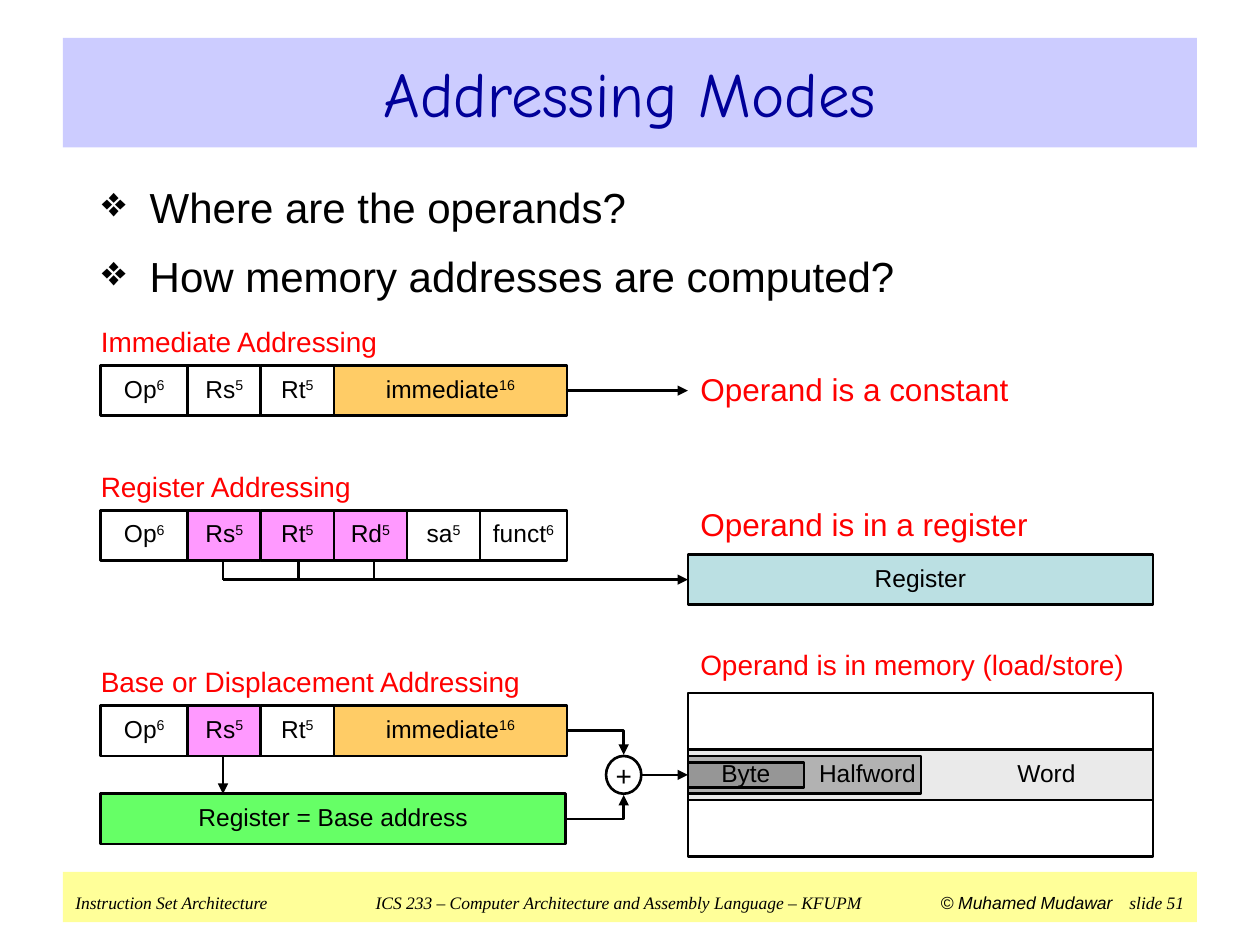
from pptx import Presentation
from pptx.dml.color import RGBColor
from pptx.enum.shapes import MSO_CONNECTOR, MSO_SHAPE
from pptx.enum.text import MSO_ANCHOR, PP_ALIGN
from pptx.oxml.ns import qn
from pptx.util import Inches, Pt
from lxml.etree import SubElement

BLACK = RGBColor(0x00, 0x00, 0x00)
WHITE = RGBColor(0xFF, 0xFF, 0xFF)
RED = RGBColor(0xFF, 0x00, 0x00)
NAVY = RGBColor(0x00, 0x00, 0x99)
LAVENDER = RGBColor(0xCC, 0xCC, 0xFF)
YELLOW = RGBColor(0xFF, 0xFF, 0x99)
PINK = RGBColor(0xFF, 0x99, 0xFF)
ORANGE = RGBColor(0xFF, 0xCC, 0x66)
GREEN = RGBColor(0x66, 0xFF, 0x66)
TEAL = RGBColor(0xBB, 0xE0, 0xE3)
LIGHT_GRAY = RGBColor(0xEA, 0xEA, 0xEA)
MID_GRAY = RGBColor(0xB2, 0xB2, 0xB2)
DARK_GRAY = RGBColor(0x96, 0x96, 0x96)

LEFT, RIGHT = 0.8, 5.46
WIDTH, HEIGHT = 3.69, 0.4
OP_W, REG_W, IMM_W = 0.69, 0.58, 1.85
ADDER_X, ADDER_Y = 4.95, 6.15


class Diagram:
    """Holds the slide and the style shared by its elements."""

    font = "Arial"
    line_width = Pt(1.5)

    def __init__(self, slide):
        self.slide = slide

    def run(self, p, text, size, color=BLACK, superscript=False, **fmt):
        r = p.add_run()
        r.text = text
        for name, value in {"name": self.font, "size": Pt(size), **fmt}.items():
            setattr(r.font, name, value)
        r.font.color.rgb = color
        if superscript:
            r.font._element.set("baseline", "30000")

    def frame(self, sp, anchor=MSO_ANCHOR.MIDDLE, margins=(0, 0, 0, 0)):
        """Prepare the text frame; margins are left, top, right, bottom."""
        tf = sp.text_frame
        sides = ("left", "top", "right", "bottom")
        fmt = {f"margin_{side}": Inches(m) for side, m in zip(sides, margins)}
        fmt.update(word_wrap=True, vertical_anchor=anchor)
        for name, value in fmt.items():
            setattr(tf, name, value)
        return tf

    def shape(self, x, y, w, h, fill=None, outline=True, kind=MSO_SHAPE.RECTANGLE):
        sp = self.slide.shapes.add_shape(kind, Inches(x), Inches(y), Inches(w), Inches(h))
        sp.shadow.inherit = False
        if fill is None:
            sp.fill.background()
        else:
            sp.fill.solid()
            sp.fill.fore_color.rgb = fill
        if outline:
            sp.line.color.rgb = BLACK
            sp.line.width = self.line_width
        else:
            sp.line.fill.background()
        return sp

    def cell(self, x, y, w, text, fill=WHITE, h=HEIGHT, indent=0):
        """Box with centred text; whatever follows ^ is superscript."""
        p = self.frame(self.shape(x, y, w, h, fill)).paragraphs[0]
        p.alignment, p.line_spacing = PP_ALIGN.CENTER, 0.85
        if indent:
            p._p.get_or_add_pPr().set("marL", str(Inches(indent)))
        base, _, bits = text.partition("^")
        self.run(p, base, 14)
        if bits:
            self.run(p, bits, 14, superscript=True)

    def instruction(self, y, title, fields):
        self.label(LEFT, y - 0.35, title)
        x = LEFT
        for text, width, fill in fields:
            self.cell(x, y, width, text, fill)
            x += width

    def label(self, x, y, text, size=16, inset=0):
        sp = self.slide.shapes.add_textbox(Inches(x), Inches(y), Inches(WIDTH), Inches(0.32))
        tf = self.frame(sp, margins=(inset, 0, inset, 0))
        self.run(tf.paragraphs[0], text, size, RED)

    def banner(self, text):
        p = self.frame(self.shape(0.5, 0.3, 9, 0.87, LAVENDER, False)).paragraphs[0]
        p.alignment = PP_ALIGN.CENTER
        self.run(p, text, 36, NAVY, name="Comic Neue")

    def bullets(self, lines):
        sp = self.slide.shapes.add_textbox(Inches(0.71), Inches(1.35), Inches(8.39), Inches(1.15))
        tf = self.frame(sp, MSO_ANCHOR.TOP, (0.1, 0.09, 0.1, 0.05))
        for i, text in enumerate(lines):
            p = tf.add_paragraph() if i else tf.paragraphs[0]
            p.space_after = Pt(10.5)
            pPr = p._p.get_or_add_pPr()
            pPr.set("marL", str(Inches(0.38)))
            pPr.set("indent", str(-Inches(0.38)))
            SubElement(pPr, qn("a:buChar"), char="❖")
            self.run(p, text, 24)

    def footer(self, parts, stops):
        """Parts are (text, font) pairs, stops are (alignment, position) pairs."""
        sp = self.shape(0.5, 6.92, 9, HEIGHT, YELLOW, False)
        p = self.frame(sp, MSO_ANCHOR.BOTTOM, (0.1, 0.05, 0.1, 0.07)).paragraphs[0]
        p.alignment = PP_ALIGN.LEFT
        tabs = SubElement(p._p.get_or_add_pPr(), qn("a:tabLst"))
        for algn, pos in stops:
            SubElement(tabs, qn("a:tab"), pos=str(Inches(pos)), algn=algn)
        for i, (text, font) in enumerate(parts):
            self.run(p, "\t" + text if i else text, 10, name=font, italic=True)

    def connector(self, x1, y1, x2, y2, arrow=True, bent=False):
        kind = MSO_CONNECTOR.ELBOW if bent else MSO_CONNECTOR.STRAIGHT
        cn = self.slide.shapes.add_connector(kind, Inches(x1), Inches(y1), Inches(x2), Inches(y2))
        cn.line.color.rgb = BLACK
        cn.line.width = self.line_width
        spPr = cn._element.spPr
        if bent:
            spPr.find(qn("a:prstGeom")).set("prst", "bentConnector2")
        if arrow:
            SubElement(cn.line._get_or_add_ln(), qn("a:tailEnd"), type="triangle")
        SubElement(spPr, qn("a:effectLst"))

    def adder(self, x, y, w, h):
        sp = self.shape(x - w / 2, y - h / 2, w, h, WHITE, kind=MSO_SHAPE.OVAL)
        p = self.frame(sp).paragraphs[0]
        p.alignment = PP_ALIGN.CENTER
        self.run(p, "+", 16)


def main():
    prs = Presentation()
    prs.slide_width, prs.slide_height = Inches(10), Inches(7.5)
    d = Diagram(prs.slides.add_slide(prs.slide_layouts[6]))

    d.footer([("Instruction Set Architecture", "Times New Roman"),
              ("ICS 233 – Computer Architecture and Assembly Language – KFUPM", "Times New Roman"),
              ("© Muhamed Mudawar", "Arial"),
              ("slide 51", "Times New Roman")],
             [("ctr", 4.31), ("r", 8.23), ("r", 8.8)])
    d.banner("Addressing Modes")
    d.bullets(["Where are the operands?", "How memory addresses are computed?"])

    op, rt = ("Op^6", OP_W, WHITE), ("Rt^5", REG_W, WHITE)
    rs_used = ("Rs^5", REG_W, PINK)
    immediate = ("immediate^16", IMM_W, ORANGE)

    # Immediate addressing
    d.instruction(2.9, "Immediate Addressing", [op, ("Rs^5", REG_W, WHITE), rt, immediate])
    d.label(RIGHT, 2.93, "Operand is a constant", 18, 0.1)
    d.connector(4.49, 3.1, RIGHT, 3.1)

    # Register addressing
    d.instruction(4.05, "Register Addressing",
                  [op, rs_used, ("Rt^5", REG_W, PINK), ("Rd^5", REG_W, PINK),
                   ("sa^5", REG_W, WHITE), ("funct^6", OP_W, WHITE)])
    d.label(RIGHT, 4, "Operand is in a register", 18, 0.1)
    d.cell(RIGHT, 4.4, WIDTH, "Register", TEAL)
    for i in range(3):
        x = 1.77 + 0.6 * i
        d.connector(x, 4.45, x, 4.6, arrow=False)
    d.connector(1.77, 4.6, RIGHT, 4.6)

    # Base or displacement addressing
    d.instruction(5.6, "Base or Displacement Addressing", [op, rs_used, rt, immediate])
    d.cell(LEFT, 6.3, WIDTH, "Register = Base address", GREEN)
    d.connector(1.77, 6, 1.77, 6.3)
    d.adder(ADDER_X, ADDER_Y, 0.28, 0.3)
    for y, end in ((5.8, 5.99), (6.5, 6.31)):
        d.connector(4.5, y, ADDER_X, end, bent=True)
    d.connector(5.09, ADDER_Y, RIGHT, ADDER_Y)

    # Memory
    d.label(RIGHT, 5.11, "Operand is in memory (load/store)", inset=0.1)
    d.cell(RIGHT, 5.95, WIDTH, "Word", LIGHT_GRAY, indent=2)
    d.shape(RIGHT, 5.5, WIDTH, 1.3)
    d.cell(RIGHT, 6, 1.85, "Halfword", MID_GRAY, h=0.3, indent=1)
    d.cell(RIGHT, 6.05, 0.92, "Byte", DARK_GRAY, h=0.2)

    prs.save("out.pptx")


if __name__ == "__main__":
    main()
